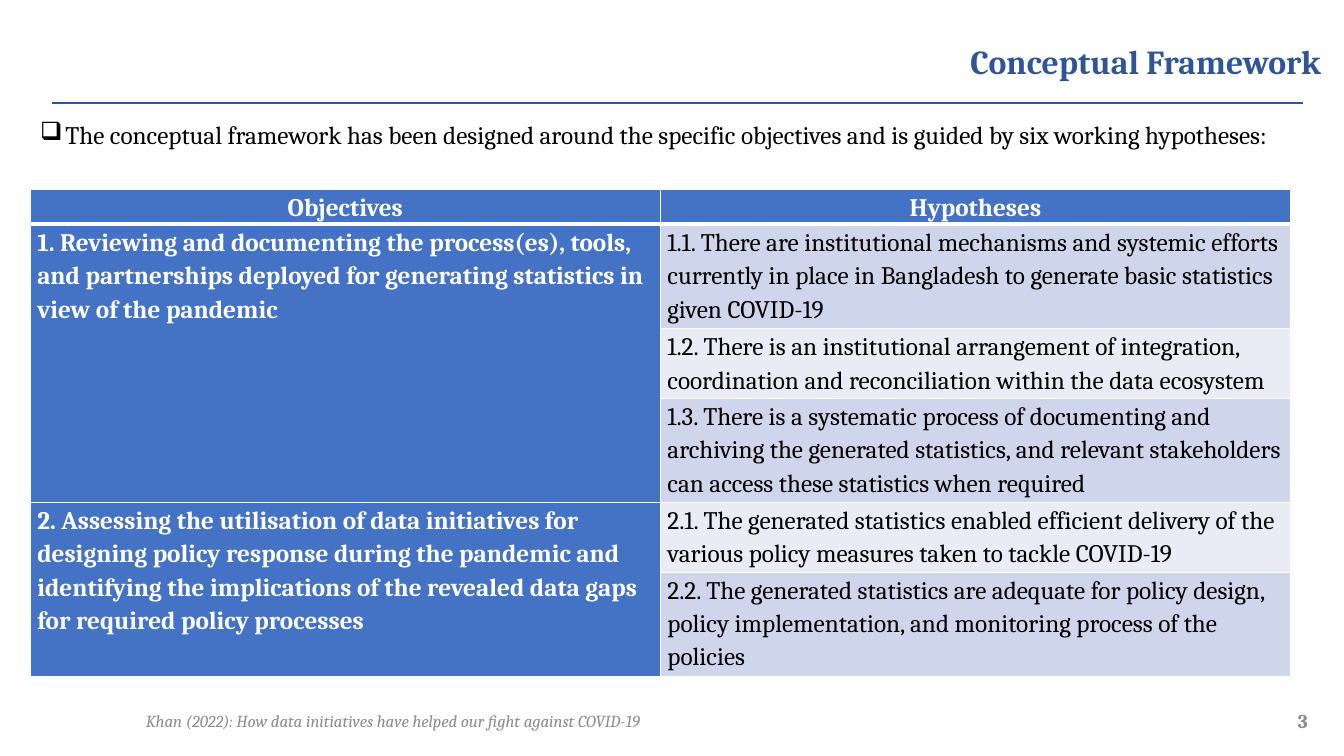
from lxml.etree import SubElement
from pptx import Presentation
from pptx.dml.color import RGBColor
from pptx.enum.shapes import MSO_CONNECTOR
from pptx.enum.text import MSO_ANCHOR as ANCHOR, PP_ALIGN as ALIGN
from pptx.oxml.ns import qn
from pptx.util import Inches, Pt

COLORS = {"title": "2F5597", "text": "000000", "footer": "8C8C8C", "head": "4472C4",
          "band_dark": "CFD5EA", "band_light": "E9EBF5", "white": "FFFFFF"}
FONT = "Cambria"
LEFT, TABLE_TOP, COL_W = 0.3, 1.88, 6.25
FOOTER_TOP, FOOTER_H = 6.95, 0.4


def write(tf, text, color, align, spacing=1.0, **font):
    """Fill the first paragraph of a text frame with one formatted run."""
    tf.word_wrap = True
    p = tf.paragraphs[0]
    p.alignment, p.line_spacing = align, spacing
    r = p.add_run()
    r.text = text
    r.font.name = FONT
    r.font.color.rgb = RGBColor.from_string(COLORS[color])
    for name, value in font.items():
        setattr(r.font, name, value)
    return p


def add_border(cell, side, width):
    ln = SubElement(cell._tc.get_or_add_tcPr(), qn(f"a:ln{side}"), w=str(Pt(width)))
    fill = SubElement(ln, qn("a:solidFill"))
    SubElement(fill, qn("a:srgbClr"), val=COLORS["white"])


prs = Presentation()
prs.slide_width, prs.slide_height = Inches(13.33), Inches(7.5)
s = prs.slides.add_slide(prs.slide_layouts[6])

# Rule under the title
rule = s.shapes.add_connector(MSO_CONNECTOR.STRAIGHT, Inches(0.52), Inches(1.02),
                              Inches(12.92), Inches(1.02))
rule.line.color.rgb = RGBColor.from_string(COLORS["title"])
rule.line.width = Pt(1.5)
SubElement(rule._element.spPr, qn("a:effectLst"))

# Title, introduction, footer and slide number
intro = "The conceptual framework has been designed around the specific objectives and is guided by six working hypotheses:"
source = "Khan (2022): How data initiatives have helped our fight against COVID-19"
texts = [
    ((5.46, 0.25, 7.74, 0.77), ANCHOR.MIDDLE, "Conceptual Framework", "title", ALIGN.RIGHT,
     {"spacing": 0.9, "size": Pt(24), "bold": True}),
    ((LEFT, 1.17, 12.67, 0.6), ANCHOR.TOP, intro, "text", ALIGN.JUSTIFY,
     {"spacing": 0.9, "size": Pt(18)}),
    ((0.36, FOOTER_TOP, 7.08, FOOTER_H), ANCHOR.MIDDLE, source, "footer", ALIGN.CENTER,
     {"size": Pt(12), "italic": True}),
    ((10.07, FOOTER_TOP, 3, FOOTER_H), ANCHOR.MIDDLE, "3", "footer", ALIGN.RIGHT,
     {"size": Pt(14), "bold": True}),
]
for box, anchor, text, color, align, style in texts:
    tf = s.shapes.add_textbox(*map(Inches, box)).text_frame
    tf.vertical_anchor = anchor
    p = write(tf, text, color, align, **style)
    if text == intro:
        p.space_before = Pt(10)
        pPr = p._p.get_or_add_pPr()
        pPr.set("marL", str(Inches(0.25)))
        pPr.set("indent", str(-Inches(0.25)))
        SubElement(pPr, qn("a:buChar"), char="❑")

# Objectives, each spanning the rows of its hypotheses
framework = [
    ("1. Reviewing and documenting the process(es), tools, and partnerships deployed for generating statistics in view of the pandemic",
     ["1.1. There are institutional mechanisms and systemic efforts currently in place in Bangladesh to generate basic statistics given COVID-19",
      "1.2. There is an institutional arrangement of integration, coordination and reconciliation within the data ecosystem",
      "1.3. There is a systematic process of documenting and archiving the generated statistics, and relevant stakeholders can access these statistics when required"]),
    ("2. Assessing the utilisation of data initiatives for designing policy response during the pandemic and identifying the implications of the revealed data gaps for required policy processes",
     ["2.1. The generated statistics enabled efficient delivery of the various policy measures taken to tackle COVID-19",
      "2.2. The generated statistics are adequate for policy design, policy implementation, and monitoring process of the policies"]),
]
row_heights = [0.29, 0.64, 0.61, 0.9, 0.61, 0.61]
table = s.shapes.add_table(len(row_heights), 2, Inches(LEFT), Inches(TABLE_TOP),
                           Inches(2 * COL_W), Inches(sum(row_heights))).table
for col in table.columns:
    col.width = Inches(COL_W)
for row, height in zip(table.rows, row_heights):
    row.height = Inches(height)

entries = {(0, 0): "Objectives", (0, 1): "Hypotheses"}
top = 1
for objective, hypotheses in framework:
    entries[top, 0] = objective
    for i, hypothesis in enumerate(hypotheses):
        entries[top + i, 1] = hypothesis
    bottom = top + len(hypotheses) - 1
    table.cell(top, 0).merge(table.cell(bottom, 0))
    top = bottom + 1

for r in range(len(row_heights)):
    for c in range(2):
        cell = table.cell(r, c)
        is_head = r == 0 or c == 0
        cell.margin_left = cell.margin_right = Inches(0.07)
        cell.margin_top = cell.margin_bottom = 0
        for side in "LRTB":
            thick = (r, side) in ((0, "B"), (1, "T"))
            add_border(cell, side, 3 if thick else 1)
        band = "band_dark" if r % 2 else "band_light"
        cell.fill.solid()
        cell.fill.fore_color.rgb = RGBColor.from_string(COLORS["head" if is_head else band])
        if (r, c) in entries:
            p = write(cell.text_frame, entries[r, c], "white" if is_head else "text",
                      ALIGN.LEFT if r else ALIGN.CENTER, 1.15, size=Pt(18), bold=is_head)
            p.space_after = Pt(6)

prs.save("out.pptx")
